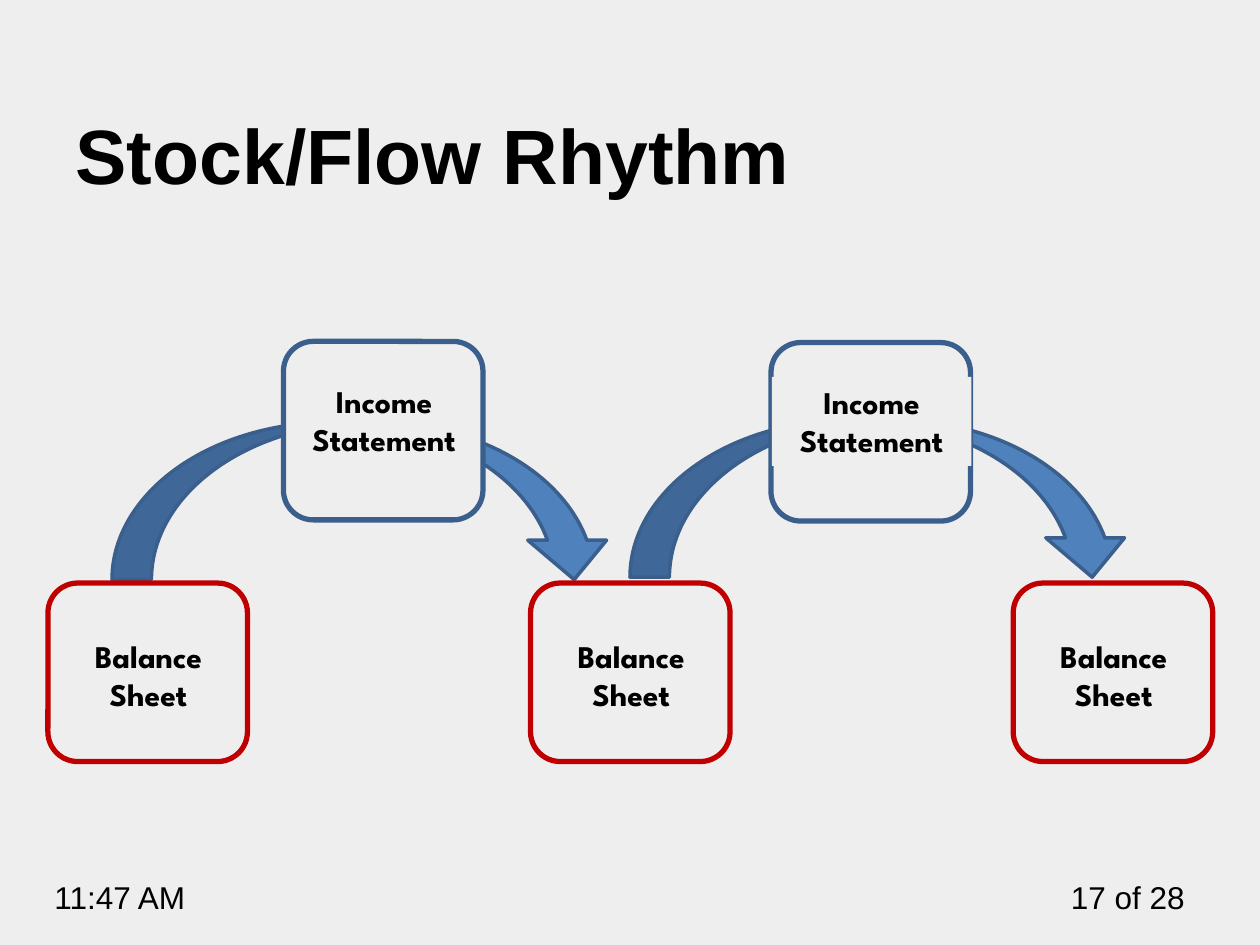
import pptx
import pptx.dml.color
import pptx.enum.shapes
import pptx.enum.text
import pptx.util

Pt = pptx.util.Pt
SHAPE = pptx.enum.shapes.MSO_SHAPE
ALIGN = pptx.enum.text.PP_ALIGN
ANCHOR = pptx.enum.text.MSO_ANCHOR

BACKGROUND, BLACK = "EEEEEE", "000000"
ARROW_BLUE, EDGE_BLUE, RED = "4F81BD", "3A5F8C", "C00000"

TITLE = "Stock/Flow Rhythm"
# text, left, width, alignment
FOOTERS = [
    ("11:47 AM", 24, 114, ALIGN.LEFT),
    ("17 of 28", 600, 84, ALIGN.RIGHT),
]
# left, top
ARROWS = [(360, 239.8), (64, 241.2)]
ARROW_SIZE = (286.6, 90)

# text, left, top, label offset, edge colour, box fill, label fill
STATEMENTS = [
    ("Income Statement", 162, 195.1, 19.5, EDGE_BLUE, BACKGROUND, None),
    ("Income Statement", 440.6, 195.8, 19.5, EDGE_BLUE, None, BACKGROUND),
]
BALANCE_LEFT, BALANCE_PITCH, BALANCE_TOP = 27.4, 275.8, 333.2
STATEMENTS += [
    ("Balance Sheet", BALANCE_LEFT + i * BALANCE_PITCH, BALANCE_TOP, 27.5, RED, None, None)
    for i in range(3)
]
BOX_WIDTH, BOX_HEIGHT, LABEL_HEIGHT = 114, 102, 51


def rgb(value):
    return pptx.dml.color.RGBColor.from_string(value)


def paint(fill, colour):
    """Fill with a solid colour, or clear the fill when there is none."""
    if colour:
        fill.solid()
        fill.fore_color.rgb = rgb(colour)
    else:
        fill.background()


def write(frame, text, size, font, align, bold=False):
    frame.word_wrap = True
    paragraph = frame.paragraphs[0]
    paragraph.text = text
    paragraph.alignment = align
    paragraph.font.size = Pt(size)
    paragraph.font.name = font
    paragraph.font.bold = bold
    paragraph.font.color.rgb = rgb(BLACK)


def add_outlined(slide, kind, box, fill, edge, weight):
    shape = slide.shapes.add_shape(kind, *map(Pt, box))
    shape.shadow.inherit = False
    paint(shape.fill, fill)
    shape.line.color.rgb = rgb(edge)
    shape.line.width = Pt(weight)


def add_label(slide, box, text, font, align, bold=False, fill=None):
    label = slide.shapes.add_textbox(*map(Pt, box))
    paint(label.fill, fill)
    write(label.text_frame, text, 18, font, align, bold)


def main():
    deck = pptx.Presentation()
    deck.slide_width, deck.slide_height = Pt(720), Pt(540)
    slide = deck.slides.add_slide(deck.slide_layouts[5])
    paint(slide.background.fill, BACKGROUND)

    title = slide.shapes.title
    title.left, title.top, title.width, title.height = map(Pt, (36, 28, 648, 90))
    write(title.text_frame, TITLE, 44, "Arial", ALIGN.LEFT, bold=True)
    title.text_frame.vertical_anchor = ANCHOR.BOTTOM

    for text, left, width, align in FOOTERS:
        add_label(slide, (left, 498.2, width, 29), text, "Arial", align)

    for position in ARROWS:
        add_outlined(slide, SHAPE.CURVED_DOWN_ARROW, position + ARROW_SIZE,
                     ARROW_BLUE, EDGE_BLUE, 2)

    for text, left, top, offset, edge, box_fill, label_fill in STATEMENTS:
        add_outlined(slide, SHAPE.ROUNDED_RECTANGLE, (left, top, BOX_WIDTH, BOX_HEIGHT),
                     box_fill, edge, 3)
        add_label(slide, (left + 0.5, top + offset, BOX_WIDTH, LABEL_HEIGHT), text,
                  "League Spartan", ALIGN.CENTER, bold=True, fill=label_fill)

    deck.save("out.pptx")


if __name__ == "__main__":
    main()
